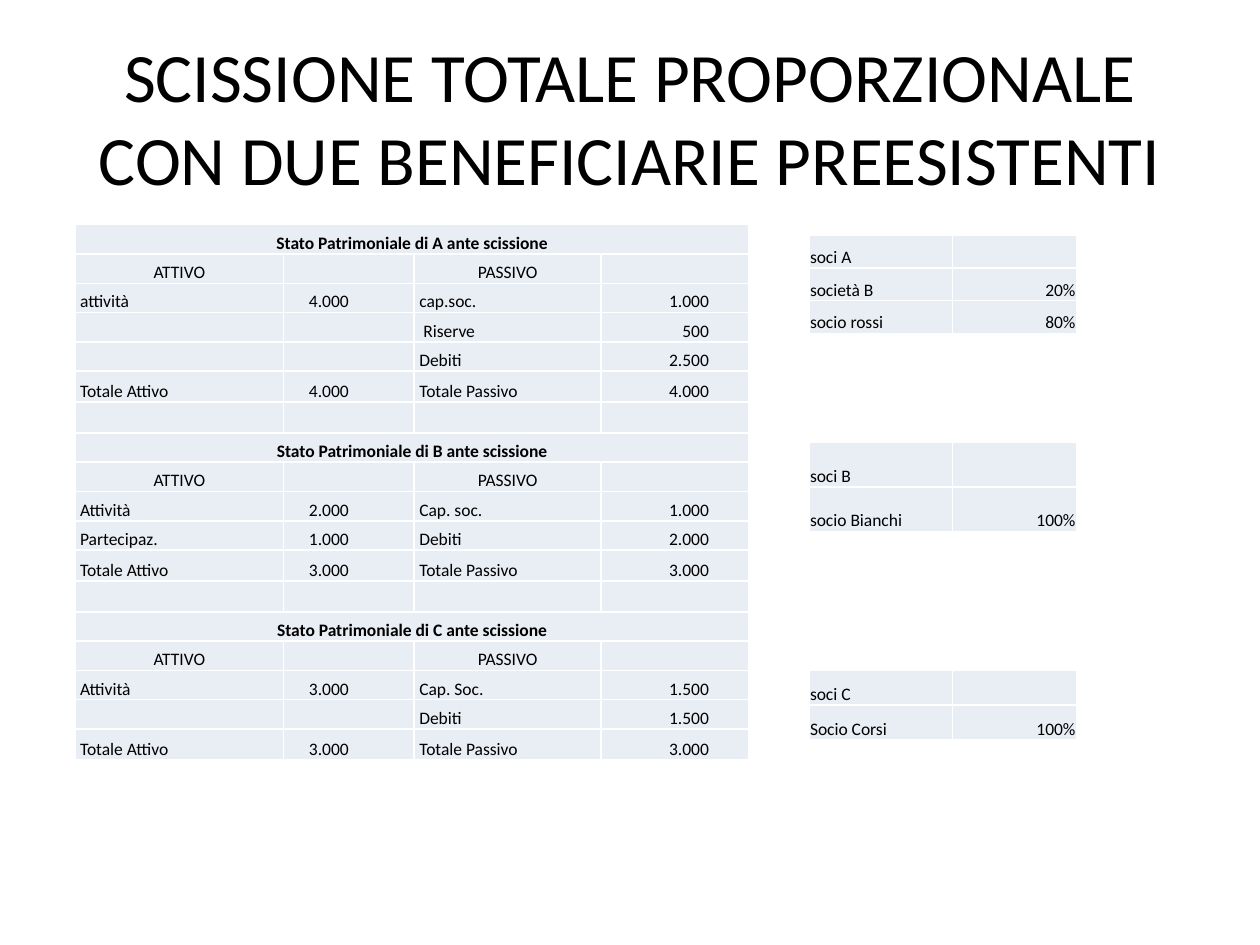
from lxml.etree import SubElement
from pptx import Presentation
from pptx.dml.color import RGBColor
from pptx.enum.text import MSO_ANCHOR, MSO_AUTO_SIZE, PP_ALIGN
from pptx.oxml.ns import qn
from pptx.util import Pt

COLORS = {"text": "000000", "cell": "E9EDF4", "line": "FFFFFF"}
FONT = "Calibri"
SIZE = 10
LEFT, MID, RIGHT = PP_ALIGN.LEFT, PP_ALIGN.CENTER, PP_ALIGN.RIGHT
HEADS = ("ATTIVO", "", "PASSIVO", "")
SHEETS = [
    ("A", [
        ("attività", "4.000", "cap.soc.", "1.000"),
        ("", "", "Riserve", "500"),
        ("", "", "Debiti", "2.500"),
        ("Totale Attivo", "4.000", "Totale Passivo", "4.000"),
    ]),
    ("B", [
        ("Attività", "2.000", "Cap. soc.", "1.000"),
        ("Partecipaz.", "1.000", "Debiti", "2.000"),
        ("Totale Attivo", "3.000", "Totale Passivo", "3.000"),
    ]),
    ("C", [
        ("Attività", "3.000", "Cap. Soc.", "1.500"),
        ("", "", "Debiti", "1.500"),
        ("Totale Attivo", "3.000", "Totale Passivo", "3.000"),
    ]),
]
OWNERS = [
    (134.2, 18.85, [("soci A", ""), ("società B", "20%"), ("socio rossi", "80%")]),
    (253, 25.4, [("soci B", ""), ("socio Bianchi", "100%")]),
    (383.2, 19.8, [("soci C", ""), ("Socio Corsi", "100%")]),
]


def style(run, size, bold=False):
    run.font.name = FONT
    run.font.size = Pt(size)
    run.font.bold = bold
    run.font.color.rgb = RGBColor.from_string(COLORS["text"])


def add_title(slide, text):
    title = slide.shapes.title
    title.left, title.top = Pt(36), Pt(21.6)
    title.width, title.height = Pt(648), Pt(90)
    frame = title.text_frame
    frame.text = text
    frame.word_wrap = True
    frame.auto_size = MSO_AUTO_SIZE.NONE
    frame.vertical_anchor = MSO_ANCHOR.MIDDLE
    para = frame.paragraphs[0]
    para.alignment = MID
    style(para.runs[0], 39.6)


def add_lines(cell):
    props = cell._tc.get_or_add_tcPr()
    for side in ("lnL", "lnR", "lnT", "lnB"):
        line = SubElement(props, qn(f"a:{side}"), w=str(Pt(1)))
        fill = SubElement(line, qn("a:solidFill"))
        SubElement(fill, qn("a:srgbClr"), val=COLORS["line"])


def fill_cell(cell, text="", align=LEFT, left=0.7, right=0.7, bold=False):
    add_lines(cell)
    cell.fill.solid()
    cell.fill.fore_color.rgb = RGBColor.from_string(COLORS["cell"])
    cell.vertical_anchor = MSO_ANCHOR.BOTTOM
    cell.margin_left, cell.margin_right = Pt(left), Pt(right)
    cell.margin_top, cell.margin_bottom = Pt(0.7), Pt(0)
    cell.text_frame.text = text
    para = cell.text_frame.paragraphs[0]
    para.alignment = align
    for run in para.runs:
        style(run, SIZE, bold)
    if not text:
        para._p.get_or_add_endParaRPr().set("sz", str(SIZE * 100))


def add_grid(slide, left, top, widths, heights):
    frame = slide.shapes.add_table(
        len(heights), len(widths), Pt(left), Pt(top),
        Pt(sum(widths)), Pt(sum(heights)))
    table = frame.table
    table.first_row = table.horz_banding = False
    for col, width in zip(table.columns, widths):
        col.width = Pt(width)
    for row, height in zip(table.rows, heights):
        row.height = Pt(height)
    return table


def sheet_rows():
    rows = []
    for name, lines in SHEETS:
        if rows:
            rows.append(("blank", ("",) * 4))
        rows.append(("title", (f"Stato Patrimoniale di {name} ante scissione", "", "", "")))
        rows.append(("head", HEADS))
        rows += [("total" if line[0].startswith("Totale") else "line", line)
                 for line in lines]
    return rows


def add_sheets(slide):
    rows = sheet_rows()
    heights = [17.7 if kind in ("total", "blank") else 16.75 for kind, _ in rows]
    table = add_grid(slide, 42.8, 128.4, (119.3, 74.6, 106.8, 84.6), heights)
    modes = [(LEFT, 3, 0.7), (LEFT, 14.5, 0.7), (LEFT, 3, 0.7), (RIGHT, 0.7, 23)]
    for r, (kind, texts) in enumerate(rows):
        for c, (text, mode) in enumerate(zip(texts, modes)):
            align, left, right = mode
            if kind in ("title", "head"):
                align, left, right = MID, 0.7, 0.7
            elif text == "Riserve":
                left += 2.3
            fill_cell(table.cell(r, c), text, align, left, right, kind == "title")
        if kind == "title":
            table.cell(r, 0).merge(table.cell(r, 3))


def add_owners(slide, top, height, rows):
    table = add_grid(slide, 462.2, top, (82.2, 70.8), [height] * len(rows))
    for r, (name, share) in enumerate(rows):
        fill_cell(table.cell(r, 0), name)
        fill_cell(table.cell(r, 1), share, RIGHT)


def main():
    deck = Presentation()
    deck.slide_width, deck.slide_height = Pt(720), Pt(540)
    slide = deck.slides.add_slide(deck.slide_layouts[5])
    add_title(slide, "SCISSIONE TOTALE PROPORZIONALE CON DUE BENEFICIARIE PREESISTENTI")
    add_sheets(slide)
    for group in OWNERS:
        add_owners(slide, *group)
    deck.save("out.pptx")


if __name__ == "__main__":
    main()
